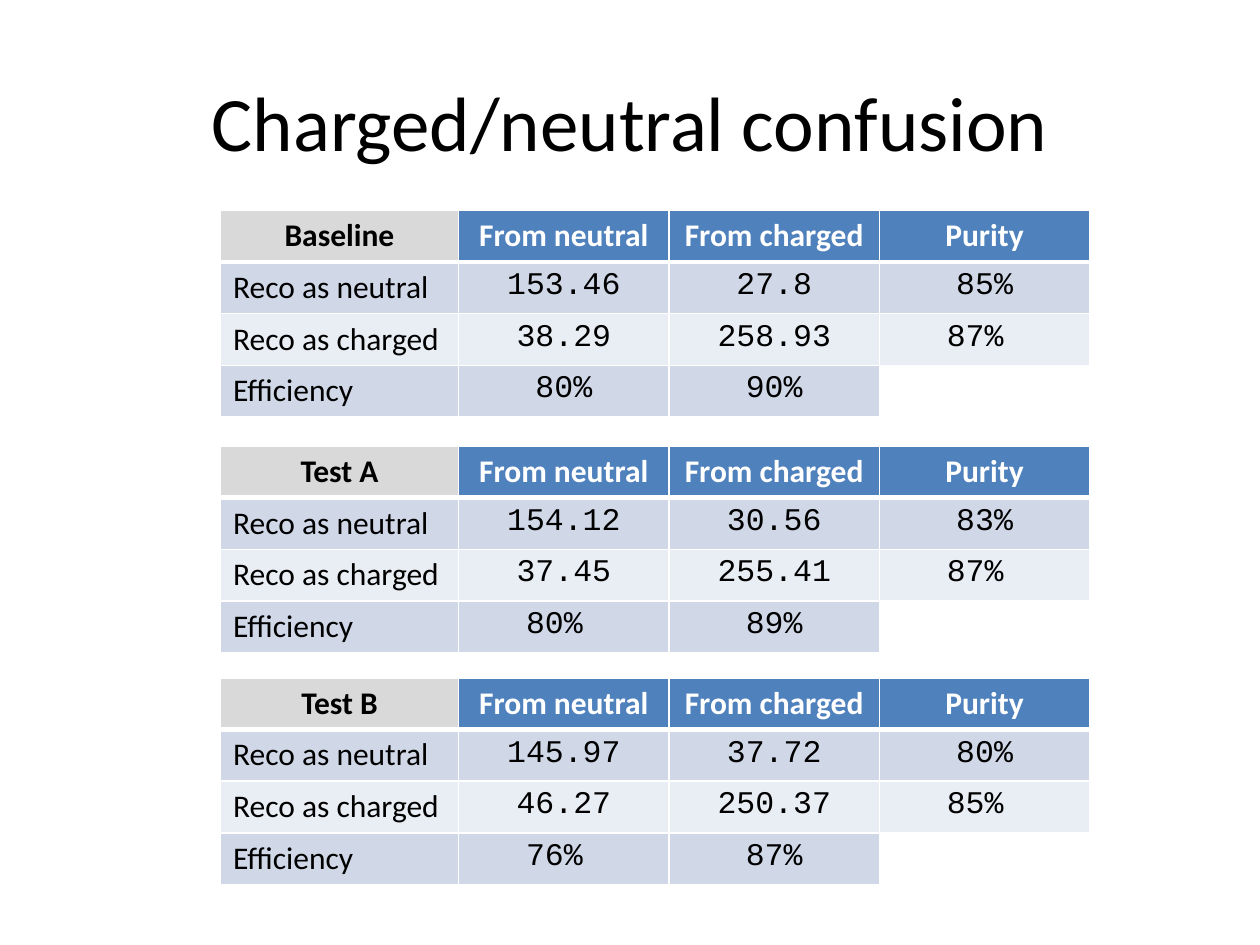
from lxml import etree
from pptx import Presentation
from pptx.dml.color import RGBColor
from pptx.enum import text
from pptx.oxml import ns
from pptx.util import Inches, Pt

BLACK = RGBColor(0x00, 0x00, 0x00)
WHITE = RGBColor(0xFF, 0xFF, 0xFF)
GREY = RGBColor(0xD9, 0xD9, 0xD9)
BLUE = RGBColor(0x4F, 0x81, 0xBD)
BANDS = (RGBColor(0xE9, 0xED, 0xF4), RGBColor(0xD0, 0xD8, 0xE8))

ORIGINS = ("From neutral", "From charged", "Purity")
ROW_LABELS = ("Reco as neutral", "Reco as charged", "Efficiency")
COLUMN_WIDTHS = (1.89, 1.67, 1.67, 1.67)
ROW_HEIGHT = 0.41
TABLE_LEFT = 1.75

# name, top in inches, values by row
RESULTS = (
    ("Baseline", 1.67, (("153.46", "27.8", "85%"),
                        ("38.29", "258.93", "87% "),
                        ("80%", "90%", ""))),
    ("Test A", 3.54, (("154.12", "30.56", "83%"),
                      ("37.45", "255.41", "87% "),
                      ("80% ", "89%", ""))),
    ("Test B", 5.38, (("145.97", "37.72", "80%"),
                      ("46.27", "250.37", "85% "),
                      ("76% ", "87%", ""))),
)


def add_borders(cell, top, bottom):
    """Draw white cell borders, 1 pt at the sides."""
    properties = cell._tc.get_or_add_tcPr()
    for side, width in (("L", 1), ("R", 1), ("T", top), ("B", bottom)):
        line = etree.SubElement(properties, ns.qn(f"a:ln{side}"), w=str(Pt(width)))
        fill = etree.SubElement(line, ns.qn("a:solidFill"))
        etree.SubElement(fill, ns.qn("a:srgbClr"), val=str(WHITE))


def fill_cell(cell, words, row, column):
    """Write and format one cell according to its place in the table."""
    header = row == 0
    add_borders(cell, top=3 if row == 1 else 1, bottom=3 if header else 1)
    if not words:
        cell.fill.background()
        return
    cell.fill.solid()
    if header:
        cell.fill.fore_color.rgb = BLUE if column else GREY
    else:
        cell.fill.fore_color.rgb = BANDS[row % 2]

    paragraph = cell.text_frame.paragraphs[0]
    paragraph.text = words
    centred = header or column
    paragraph.alignment = text.PP_ALIGN.CENTER if centred else text.PP_ALIGN.LEFT
    font = paragraph.runs[0].font
    font.size = Pt(18)
    font.bold = header
    font.name = "Courier New" if column and not header else "Calibri"
    font.color.rgb = WHITE if header and column else BLACK


def add_confusion_table(slide, left, top, name, values):
    rows = [(name, *ORIGINS)]
    rows += [(label, *numbers) for label, numbers in zip(ROW_LABELS, values)]
    table = slide.shapes.add_table(
        len(rows), len(COLUMN_WIDTHS), Inches(left), Inches(top),
        Inches(sum(COLUMN_WIDTHS)), Inches(ROW_HEIGHT * len(rows))).table
    for column, width in zip(table.columns, COLUMN_WIDTHS):
        column.width = Inches(width)
    for r, row in enumerate(rows):
        table.rows[r].height = Inches(ROW_HEIGHT)
        for c, words in enumerate(row):
            fill_cell(table.cell(r, c), words, r, c)


def set_title(slide, left, top, width, height):
    title = slide.shapes.title
    title.left, title.top = Inches(left), Inches(top)
    title.width, title.height = Inches(width), Inches(height)
    title.text_frame.text = "Charged/neutral confusion"
    title.text_frame.vertical_anchor = text.MSO_ANCHOR.MIDDLE
    paragraph = title.text_frame.paragraphs[0]
    paragraph.alignment = text.PP_ALIGN.CENTER
    font = paragraph.runs[0].font
    font.name, font.size = "Calibri", Pt(44)
    font.color.rgb = BLACK


def main():
    deck = Presentation()
    deck.slide_width, deck.slide_height = Inches(10), Inches(7.5)
    slide = deck.slides.add_slide(deck.slide_layouts.get_by_name("Title Only"))
    set_title(slide, 0.5, 0.33, 9, 1.25)
    for name, top, values in RESULTS:
        add_confusion_table(slide, TABLE_LEFT, top, name, values)
    deck.save("out.pptx")


if __name__ == "__main__":
    main()
